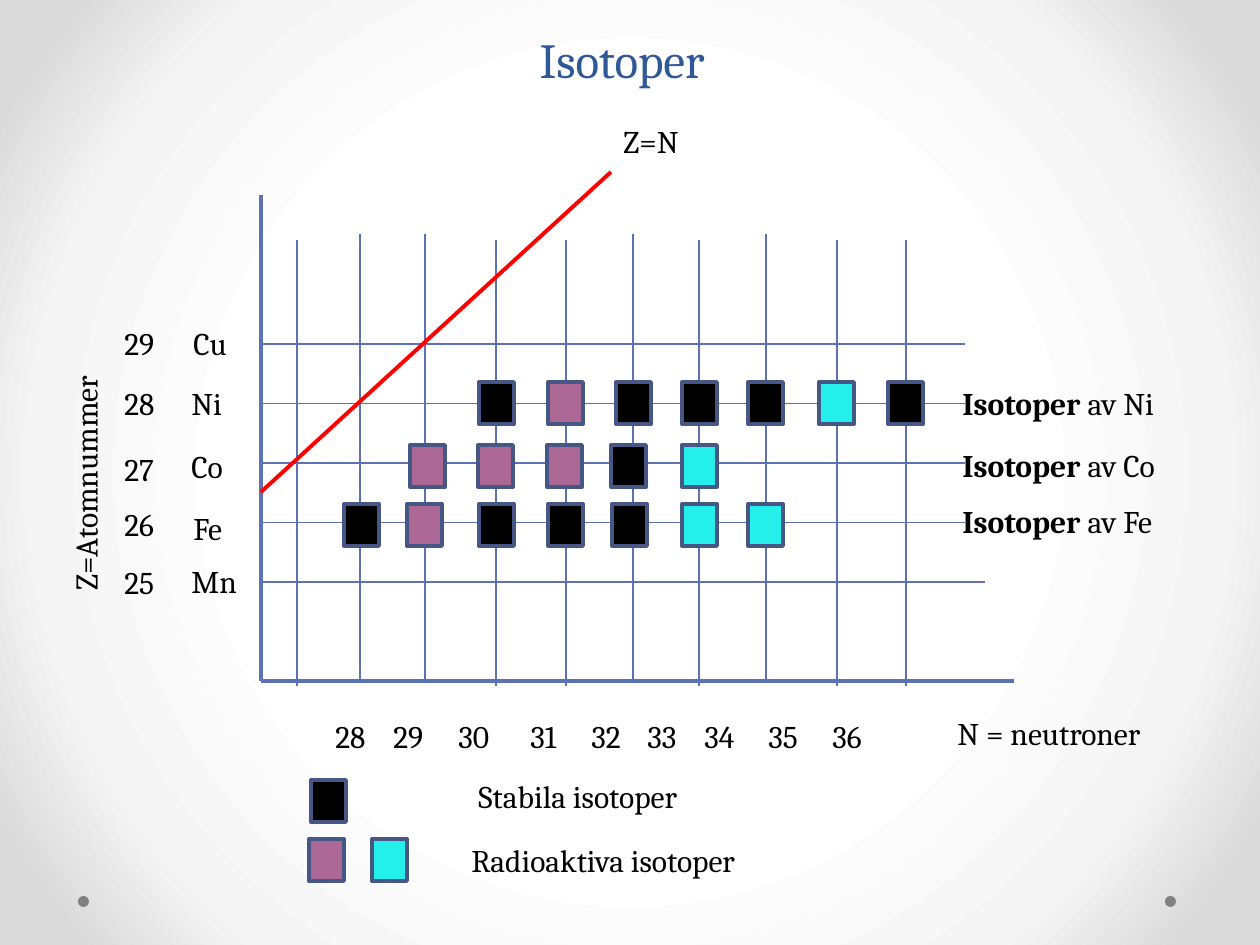
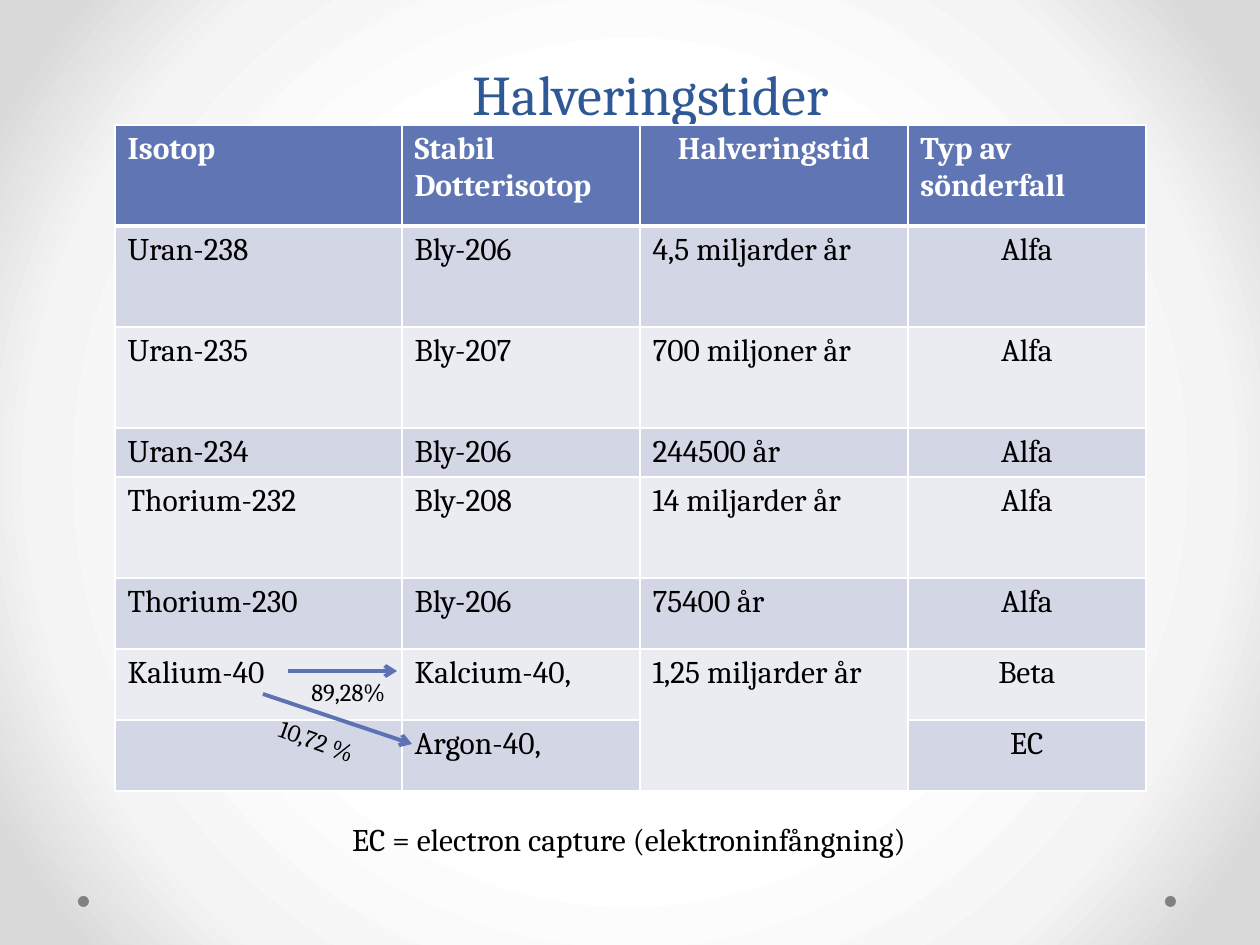
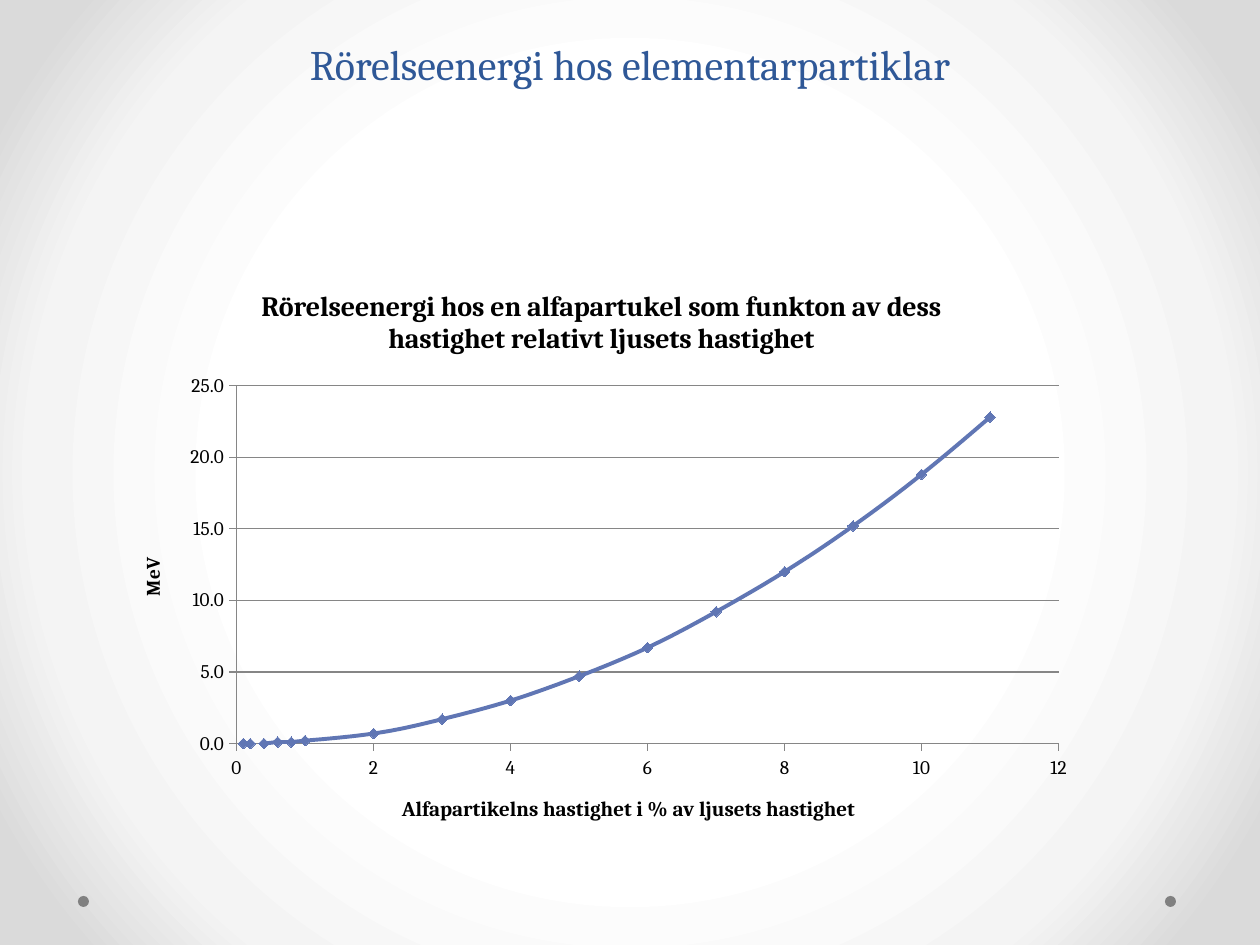
from dataclasses import dataclass

from pptx import Presentation
from pptx.chart.data import XyChartData
from pptx.dml.color import RGBColor
from pptx.enum.chart import XL_CHART_TYPE, XL_MARKER_STYLE, XL_TICK_MARK
from pptx.enum.shapes import MSO_CONNECTOR, MSO_SHAPE
from pptx.enum.text import MSO_ANCHOR, MSO_AUTO_SIZE, PP_ALIGN
from pptx.oxml import parse_xml
from pptx.oxml.ns import nsdecls
from pptx.util import Emu, Pt


@dataclass(frozen=True)
class Theme:
    font: str = "Cambria"
    text: str = "000000"
    title: str = "2F5897"
    line: str = "5C72B2"
    accent: str = "6076B4"
    outline: str = "475785"
    diagonal: str = "FF0000"
    grid: str = "868686"
    dot: str = "808080"
    white: str = "FFFFFF"
    bands: tuple = ("D2D6E5", "EAECF2")
    backdrop: tuple = ((50, "FFFFFF"), (76, "F4F4F4"), (92, "DADADA"))
    body: int = 18
    small: int = 14
    chart_title: int = 16
    axis_title: int = 12
    axis: int = 11
    title_spacing: int = 58
    thin: float = 0.75
    thick: float = 2.25


T = Theme()
PX = 914400 / 126
SLIDE = (1260, 945)
DOTS = ((1165, 896), (78, 896))
DOT_SIZE = 11

ISOTOPE_FILL = {"stable": "000000", "pink": "AC6895", "cyan": "25EFEA"}
SQUARE = (35, 42)
ELEMENTS = [
    dict(z="29", name="Cu", name_at=(181, 318), z_top=318),
    dict(z="28", name="Ni", name_at=(179, 378), z_top=378, caption_top=378, top=382,
         isotopes=[(479, "stable"), (548, "pink"), (616, "stable"), (682, "stable"),
                   (748, "stable"), (819, "cyan"), (888, "stable")]),
    dict(z="27", name="Co", name_at=(179, 441), z_top=444, caption_top=440, top=445,
         isotopes=[(410, "pink"), (478, "pink"), (547, "pink"), (611, "stable"),
                   (682, "cyan")]),
    dict(z="26", name="Fe", name_at=(181, 503), z_top=499, caption_top=496, top=504,
         isotopes=[(344, "stable"), (407, "pink"), (479, "stable"), (548, "stable"),
                   (612, "stable"), (682, "cyan"), (748, "cyan")]),
    dict(z="25", name="Mn", name_at=(179, 556), z_top=557, line_end=985),
]
NEUTRON_LINES = [(297, 240), (360, 234), (425, 234), (496, 240), (566, 240),
                 (633, 234), (699, 240), (766, 234), (837, 240), (906, 240)]
NEUTRON_LINE_LENGTH = 446
NEUTRON_COUNTS = range(28, 37)
NEUTRON_TABS = [58, 123, 195, 256, 312, 369, 433, 497]
ORIGIN = (261, 681)
ROW_TOP, ROW_STEP, ROW_END = 344, 59.5, 965
LEGEND_SQUARES = [(311, 780, "stable"), (309, 839, "pink"), (372, 839, "cyan")]
PLAIN_LABELS = [
    ("Z=N", (611, 116, 106, 50)),
    ("N = neutroner", (945, 708, 226, 50)),
    ("Stabila isotoper", (466, 771, 397, 50)),
    ("Radioaktiva isotoper", (459, 835, 397, 50)),
]

HALF_LIVES = [
    ("Isotop", "Stabil Dotterisotop", "Halveringstid", "Typ av sönderfall"),
    ("Uran-238", "Bly-206", "4,5 miljarder år", "Alfa"),
    ("Uran-235", "Bly-207", "700 miljoner år", "Alfa"),
    ("Uran-234", "Bly-206", "244500 år", "Alfa"),
    ("Thorium-232", "Bly-208", "14 miljarder år", "Alfa"),
    ("Thorium-230", "Bly-206", "75400 år", "Alfa"),
    ("Kalium-40", "Kalcium-40,", "1,25 miljarder år", "Beta"),
    ("", "Argon-40,", "", "EC"),
]
TABLE_AT = (115, 125)
COLUMNS = (287, 238, 268, 238)
ROWS = (101, 101, 101, 49, 101, 71, 71, 71)
DECAY_ARROWS = [((288, 671), (397, 671)), ((263, 694), (412, 744))]
DECAY_SHARES = [("89,28%", (299, 671, 123, 43), 0), ("10,72 %", (265, 723, 122, 43), 19.9)]

SPEEDS = (0.1, 0.2, 0.4, 0.6, 0.8, *range(1, 12))
ENERGIES = (0, 0, 0, 0.1, 0.1, 0.2, 0.7, 1.7, 3, 4.7, 6.7, 9.2, 12, 15.2, 18.8, 22.8)
CHART_BOX = (115, 265, 973, 586)
PLOT_BOX = (237, 386, 822, 358)
CHART_TITLE = ("Rörelseenergi hos en alfapartukel som funkton av dess "
               "hastighet relativt ljusets hastighet")


def px(*values):
    return [Emu(round(v * PX)) for v in values]


def rgb(value):
    return RGBColor.from_string(value)


def style_font(font, size, color=T.text, bold=False):
    font.name, font.size, font.bold = T.font, Pt(size), bold
    font.color.rgb = rgb(color)


def add_text(slide, text, box, size=T.body, align=PP_ALIGN.LEFT, rotation=0):
    sp = slide.shapes.add_textbox(*px(*box))
    sp.rotation = rotation
    tf = sp.text_frame
    tf.word_wrap = True
    tf.text = text
    p = tf.paragraphs[0]
    p.alignment = align
    for r in p.runs:
        style_font(r.font, size)
    return p


def add_line(slide, start, end, width=T.thin, color=T.line, arrow=False):
    cxn = slide.shapes.add_connector(MSO_CONNECTOR.STRAIGHT, *px(*start, *end))
    cxn.line.width = Pt(width)
    cxn.line.color.rgb = rgb(color)
    if arrow:
        ln = cxn.element.xpath(".//a:ln")[0]
        ln.append(parse_xml(f'<a:tailEnd {nsdecls("a")} type="arrow"/>'))
    cxn.element.spPr.append(parse_xml(f'<a:effectLst {nsdecls("a")}/>'))


def add_filled(slide, kind, box, fill, outline=None):
    sp = slide.shapes.add_shape(kind, *px(*box))
    sp.shadow.inherit = False
    sp.fill.solid()
    sp.fill.fore_color.rgb = rgb(fill)
    if outline:
        sp.line.color.rgb = rgb(outline)
        sp.line.width = Pt(T.thick)
    else:
        sp.line.fill.background()
    return sp


def add_square(slide, x, y, kind):
    add_filled(slide, MSO_SHAPE.RECTANGLE, (x, y, *SQUARE), ISOTOPE_FILL[kind], T.outline)


def add_slide(prs, title, box, size):
    slide = prs.slides.add_slide(prs.slide_layouts[5])
    sp = slide.shapes.title
    sp.left, sp.top, sp.width, sp.height = px(*box)
    tf = sp.text_frame
    tf.text = title
    tf.auto_size = MSO_AUTO_SIZE.NONE
    tf.vertical_anchor = MSO_ANCHOR.BOTTOM
    p = tf.paragraphs[0]
    p.alignment = PP_ALIGN.CENTER
    p.line_spacing = Pt(T.title_spacing)
    style_font(p.runs[0].font, size, T.title)
    return slide


def style_master(prs, slide):
    master = prs.slide_master
    master.background.fill.solid()
    bg = master.element.xpath(".//p:bgPr")[0]
    stops = "".join(f'<a:gs pos="{pos * 1000}"><a:srgbClr val="{color}"/></a:gs>'
                    for pos, color in T.backdrop)
    bg.replace(bg[0], parse_xml(
        f'<a:gradFill {nsdecls("a")} rotWithShape="1"><a:gsLst>{stops}</a:gsLst>'
        '<a:path path="circle"><a:fillToRect l="50000" t="50000" r="50000" b="50000"/>'
        '</a:path></a:gradFill>'))
    tree = master.element.xpath(".//p:spTree")[0]
    for x, y in DOTS:
        dot = add_filled(slide, MSO_SHAPE.OVAL, (x, y, DOT_SIZE, DOT_SIZE), T.dot)
        tree.append(dot.element)


def add_neutron_scale(slide):
    p = add_text(slide, "\t".join(map(str, NEUTRON_COUNTS)), (323, 711, 661, 50))
    tabs = "".join(f'<a:tab pos="{pos}" algn="l"/>' for pos in px(*NEUTRON_TABS))
    p._p.get_or_add_pPr().append(parse_xml(f'<a:tabLst {nsdecls("a")}>{tabs}</a:tabLst>'))


def build_isotopes(slide):
    add_text(slide, "Z=Atomnummer", (-63, 430, 296, 50), rotation=270)
    x0, y0 = ORIGIN
    add_line(slide, (x0, 195), ORIGIN, T.thick)
    add_line(slide, ORIGIN, (1014, y0), T.thick)
    for x, top in NEUTRON_LINES:
        add_line(slide, (x, top), (x, top + NEUTRON_LINE_LENGTH))
    for i, element in enumerate(ELEMENTS):
        y = ROW_TOP + i * ROW_STEP
        add_line(slide, (x0, y), (element.get("line_end", ROW_END), y))
        add_text(slide, element["z"], (112, element["z_top"], 67, 50))
        add_text(slide, element["name"], (*element["name_at"], 79, 50))
        for x, kind in element.get("isotopes", []):
            add_square(slide, x, element["top"], kind)
        if "caption_top" in element:
            p = add_text(slide, "Isotoper ", (950, element["caption_top"], 238, 50))
            p.runs[0].font.bold = True
            r = p.add_run()
            r.text = f"av {element['name']}"
            style_font(r.font, T.body)
    add_line(slide, (x0, 492), (611, 172), T.thick, T.diagonal)
    add_neutron_scale(slide)
    for square in LEGEND_SQUARES:
        add_square(slide, *square)
    for text, box in PLAIN_LABELS:
        add_text(slide, text, box)


def style_cell(cell, row, col):
    header = row == 0
    tcPr = cell._tc.get_or_add_tcPr()
    for side in "LRTB":
        heavy = (header and side == "B") or (row == 1 and side == "T")
        tcPr.append(parse_xml(
            f'<a:ln{side} {nsdecls("a")} w="{Pt(3 if heavy else 1)}"><a:solidFill>'
            f'<a:srgbClr val="{T.white}"/></a:solidFill></a:ln{side}>'))
    cell.fill.solid()
    cell.fill.fore_color.rgb = rgb(T.accent if header else T.bands[(row - 1) % 2])
    p = cell.text_frame.paragraphs[0]
    if (col == 2 and header) or (col == 3 and not header):
        p.alignment = PP_ALIGN.CENTER
    for r in p.runs:
        style_font(r.font, T.body, T.white if header else T.text, header)


def build_half_lives(slide):
    frame = slide.shapes.add_table(len(ROWS), len(COLUMNS),
                                   *px(*TABLE_AT, sum(COLUMNS), sum(ROWS)))
    table = frame.table
    for column, width in zip(table.columns, px(*COLUMNS)):
        column.width = width
    for row, height in zip(table.rows, px(*ROWS)):
        row.height = height
    for i, values in enumerate(HALF_LIVES):
        for j, value in enumerate(values):
            cell = table.cell(i, j)
            cell.text = value
            style_cell(cell, i, j)
    table.cell(6, 2).merge(table.cell(7, 2))
    for start, end in DECAY_ARROWS:
        add_line(slide, start, end, T.thick, arrow=True)
    for text, box, rotation in DECAY_SHARES:
        add_text(slide, text, box, T.small, rotation=rotation)
    add_text(slide, "EC = electron capture (elektroninfångning)", (287, 814, 684, 50),
             align=PP_ALIGN.CENTER)


def set_chart_title(owner, text, size):
    owner.has_title = True
    title = owner.chart_title if hasattr(owner, "chart_title") else owner.axis_title
    title.text_frame.text = text
    style_font(title.text_frame.paragraphs[0].runs[0].font, size, bold=True)


def style_axis(axis, title, title_size, maximum, step, number_format):
    set_chart_title(axis, title, title_size)
    axis.minimum_scale, axis.maximum_scale, axis.major_unit = 0, maximum, step
    axis.major_tick_mark = XL_TICK_MARK.OUTSIDE
    axis.minor_tick_mark = XL_TICK_MARK.NONE
    axis.has_minor_gridlines = False
    axis.tick_labels.number_format = number_format
    axis.tick_labels.number_format_is_linked = False
    style_font(axis.tick_labels.font, T.axis)
    axis.format.line.color.rgb = rgb(T.grid)


def place_plot(chart):
    area = chart.element.xpath(".//c:plotArea")[0]
    for layout in area.xpath("./c:layout"):
        area.remove(layout)
    left, top, width, height = CHART_BOX
    x, y, w, h = PLOT_BOX
    shares = dict(x=(x - left) / width, y=(y - top) / height, w=w / width, h=h / height)
    parts = "".join(f'<c:{k} val="{v:.3f}"/>' for k, v in shares.items())
    area.insert(0, parse_xml(
        f'<c:layout {nsdecls("c")}><c:manualLayout><c:layoutTarget val="inner"/>'
        f'<c:xMode val="edge"/><c:yMode val="edge"/>{parts}</c:manualLayout></c:layout>'))


def build_energy(slide):
    data = XyChartData()
    series = data.add_series("Series 1")
    for speed, energy in zip(SPEEDS, ENERGIES):
        series.add_data_point(speed, energy)
    chart = slide.shapes.add_chart(XL_CHART_TYPE.XY_SCATTER_SMOOTH, *px(*CHART_BOX), data).chart
    style_font(chart.font, T.axis)
    chart.has_legend = False
    set_chart_title(chart, CHART_TITLE, T.chart_title)
    style_axis(chart.category_axis, "Alfapartikelns hastighet i % av ljusets hastighet",
               T.axis_title, 12, 2, "General")
    style_axis(chart.value_axis, "MeV", T.axis, 25, 5, "0.0")
    chart.category_axis.has_major_gridlines = False
    chart.value_axis.has_major_gridlines = True
    chart.value_axis.major_gridlines.format.line.color.rgb = rgb(T.grid)
    plot = chart.plots[0]
    plot.vary_by_categories = False
    curve = plot.series[0]
    curve.format.line.color.rgb = rgb(T.accent)
    curve.format.line.width = Pt(T.thick)
    curve.marker.style = XL_MARKER_STYLE.DIAMOND
    curve.marker.size = 6
    curve.marker.format.fill.solid()
    curve.marker.format.fill.fore_color.rgb = rgb(T.accent)
    curve.marker.format.line.color.rgb = rgb(T.accent)
    for smooth in chart.element.xpath(".//c:smooth"):
        smooth.set("val", "1")
    place_plot(chart)


SLIDES = [
    ("Isotoper", (55, 26, 1134, 69), 28, build_isotopes),
    ("Halveringstider", (84, 37, 1134, 96), 32, build_half_lives),
    ("Rörelseenergi hos elementarpartiklar", (63, 26, 1134, 69), 24, build_energy),
]


def main():
    prs = Presentation()
    prs.slide_width, prs.slide_height = px(*SLIDE)
    for i, (title, box, size, build) in enumerate(SLIDES):
        slide = add_slide(prs, title, box, size)
        if i == 0:
            style_master(prs, slide)
        build(slide)
    prs.save("out.pptx")


if __name__ == "__main__":
    main()
